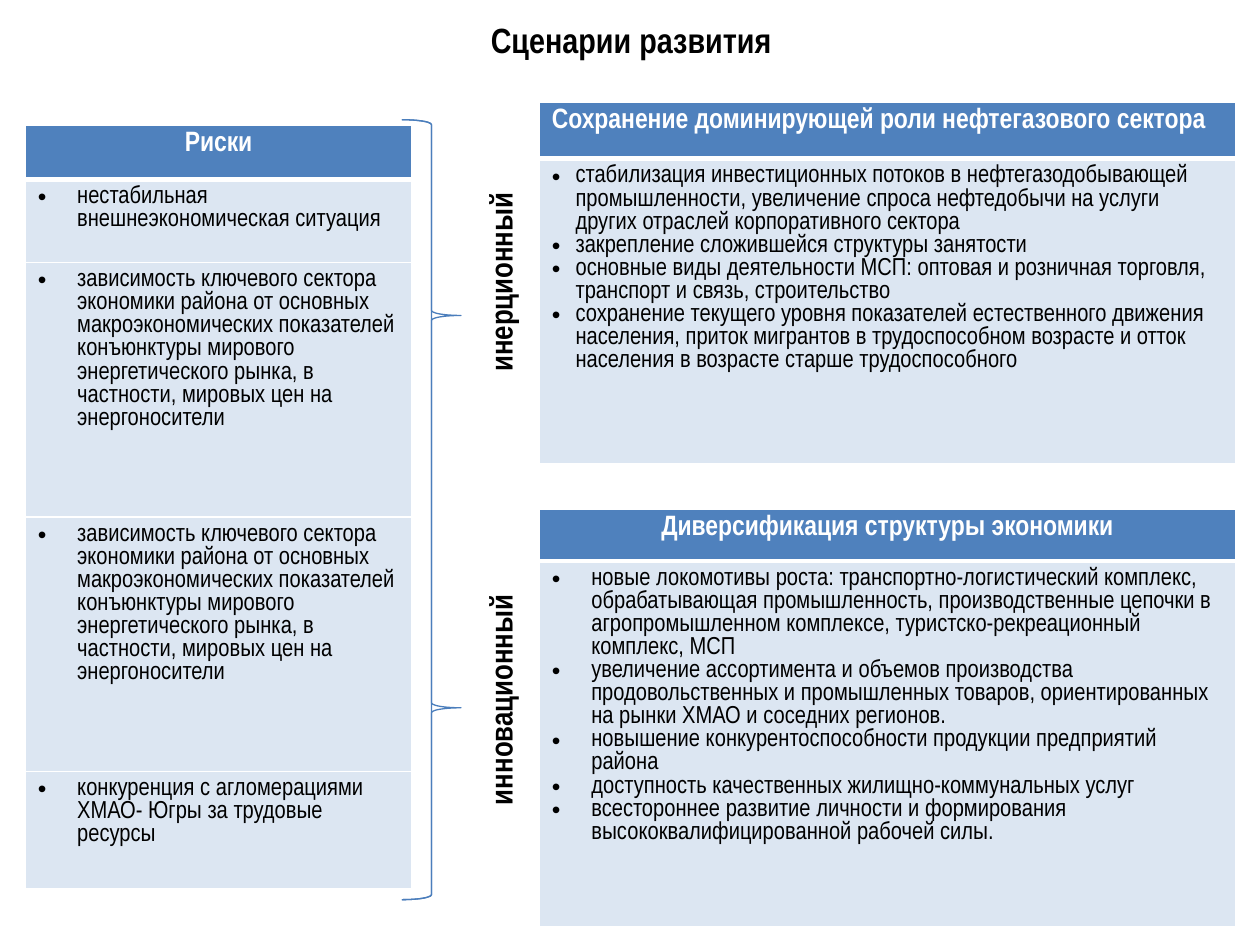
from lxml import etree
from pptx import Presentation
from pptx.dml.color import RGBColor
from pptx.enum.shapes import MSO_SHAPE
from pptx.enum.text import MSO_ANCHOR, PP_ALIGN
from pptx.oxml.ns import qn
from pptx.util import Pt

CENTER, LEFT = PP_ALIGN.CENTER, PP_ALIGN.LEFT
MIDDLE = MSO_ANCHOR.MIDDLE
RIGHT_BRACE = MSO_SHAPE.RIGHT_BRACE
BLACK = RGBColor(0x00, 0x00, 0x00)
WHITE = RGBColor(0xFF, 0xFF, 0xFF)
HEADER_BLUE = RGBColor(0x4F, 0x81, 0xBD)
BODY_BLUE = RGBColor(0xDC, 0xE6, 0xF2)
BRACE_BLUE = RGBColor(0x4B, 0x7E, 0xBC)
FONT = "Arial Narrow"
THIN, THICK = 1, 3

DEPENDENCE = (
    "зависимость ключевого сектора экономики района от основных "
    "макроэкономических показателей конъюнктуры мирового энергетического "
    "рынка, в частности, мировых цен на энергоносители"
)
RISKS = [
    ["нестабильная внешнеэкономическая ситуация"],
    [DEPENDENCE],
    [DEPENDENCE],
    ["конкуренция с агломерациями ХМАО- Югры за трудовые ресурсы"],
]
INERTIAL = [
    "стабилизация инвестиционных потоков в нефтегазодобывающей промышленности, "
    "увеличение спроса нефтедобычи на услуги других отраслей корпоративного сектора",
    "закрепление сложившейся структуры занятости",
    "основные виды деятельности МСП: оптовая и розничная торговля, "
    "транспорт и связь, строительство",
    "сохранение текущего уровня показателей естественного движения населения, "
    "приток мигрантов в трудоспособном возрасте и отток населения "
    "в возрасте старше трудоспособного",
]
INNOVATIVE = [
    "новые локомотивы роста: транспортно-логистический комплекс, "
    "обрабатывающая промышленность, производственные цепочки "
    "в агропромышленном комплексе, туристско-рекреационный комплекс, МСП",
    "увеличение ассортимента и объемов производства продовольственных "
    "и промышленных товаров, ориентированных на рынки ХМАО и соседних регионов.",
    "новышение конкурентоспособности продукции предприятий района",
    "доступность качественных жилищно-коммунальных услуг",
    "всестороннее развитие личности и формирования "
    "высококвалифицированной рабочей силы.",
]


def format_paragraph(para, size, color, bold, align):
    para.alignment = align
    for span in para.runs:
        span.font.name = FONT
        span.font.size = Pt(size)
        span.font.bold = bold
        span.font.color.rgb = color


def add_label(page, text, left, top, width, height, size, vertical=False):
    box = page.shapes.add_textbox(Pt(left), Pt(top), Pt(width), Pt(height))
    frame = box.text_frame
    frame.word_wrap = True
    frame.text = text
    format_paragraph(frame.paragraphs[0], size, BLACK, True, CENTER)
    if vertical:
        frame._txBody.bodyPr.set("vert", "vert270")
    else:
        frame.vertical_anchor = MIDDLE


def add_brace(page, tip):
    """Draw the shared bracket with its point at the given share of its height."""
    brace = page.shapes.add_shape(RIGHT_BRACE, Pt(229.7), Pt(68.4), Pt(33.8), Pt(445.7))
    brace.adjustments[0] = 0.083
    brace.adjustments[1] = tip
    brace.shadow.inherit = False
    brace.fill.background()
    brace.line.color.rgb = BRACE_BLUE
    brace.line.width = Pt(0.75)


def add_bullet(para, indent):
    properties = para._p.get_or_add_pPr()
    properties.set("marL", str(Pt(indent)))
    properties.set("indent", str(-Pt(indent)))
    etree.SubElement(properties, qn("a:buFont"), typeface="Arial")
    etree.SubElement(properties, qn("a:buChar"), char="•")


def set_borders(cell, top, bottom):
    properties = cell._tc.get_or_add_tcPr()
    widths = {"a:lnL": THIN, "a:lnR": THIN, "a:lnT": top, "a:lnB": bottom}
    for position, (tag, width) in enumerate(widths.items()):
        line = etree.Element(qn(tag), w=str(Pt(width)))
        fill = etree.SubElement(line, qn("a:solidFill"))
        etree.SubElement(fill, qn("a:srgbClr"), val=str(WHITE))
        properties.insert(position, line)


def fill_cell(cell, color, top, bottom):
    cell.fill.solid()
    cell.fill.fore_color.rgb = color
    set_borders(cell, top, bottom)


def add_list_table(page, left, top, width, heights, title, title_align, groups, indent):
    """Add a one-column table: a header, then one row per group of bullets."""
    table = page.shapes.add_table(
        len(heights), 1, Pt(left), Pt(top), Pt(width), Pt(sum(heights))
    ).table
    for row, height in zip(table.rows, heights):
        row.height = Pt(height)
    header = table.cell(0, 0)
    header.text_frame.text = title
    format_paragraph(header.text_frame.paragraphs[0], 16, WHITE, True, title_align)
    fill_cell(header, HEADER_BLUE, THIN, THICK)
    for number, items in enumerate(groups, start=1):
        cell = table.cell(number, 0)
        cell.text_frame.text = "\n".join(items)
        for para in cell.text_frame.paragraphs:
            format_paragraph(para, 14, BLACK, False, LEFT)
            add_bullet(para, indent)
        fill_cell(cell, BODY_BLUE, THICK if number == 1 else THIN, THIN)


def main():
    deck = Presentation()
    deck.slide_width, deck.slide_height = Pt(720), Pt(540)
    page = deck.slides.add_slide(deck.slide_layouts[6])

    add_label(page, "Сценарии развития", 36.7, 6.5, 648, 31.7, 20)
    add_label(page, "инерционный", 271.4, 66.2, 36, 190, 18, vertical=True)
    add_label(page, "инновационный", 271.4, 316, 36, 167.8, 18, vertical=True)
    for tip in (0.251, 0.754):
        add_brace(page, tip)

    add_list_table(page, 14.4, 71.5, 221, [31, 47.5, 145.4, 145.4, 67],
                   "Риски", CENTER, RISKS, 22.5)
    add_list_table(page, 308.2, 58.3, 398, [32.4, 174.2],
                   "Сохранение доминирующей роли нефтегазового сектора",
                   LEFT, [INERTIAL], 13.5)
    add_list_table(page, 308.2, 291, 398, [29.5, 208.8],
                   "Диверсификация структуры экономики",
                   CENTER, [INNOVATIVE], 22.5)
    deck.save("out.pptx")


if __name__ == "__main__":
    main()
